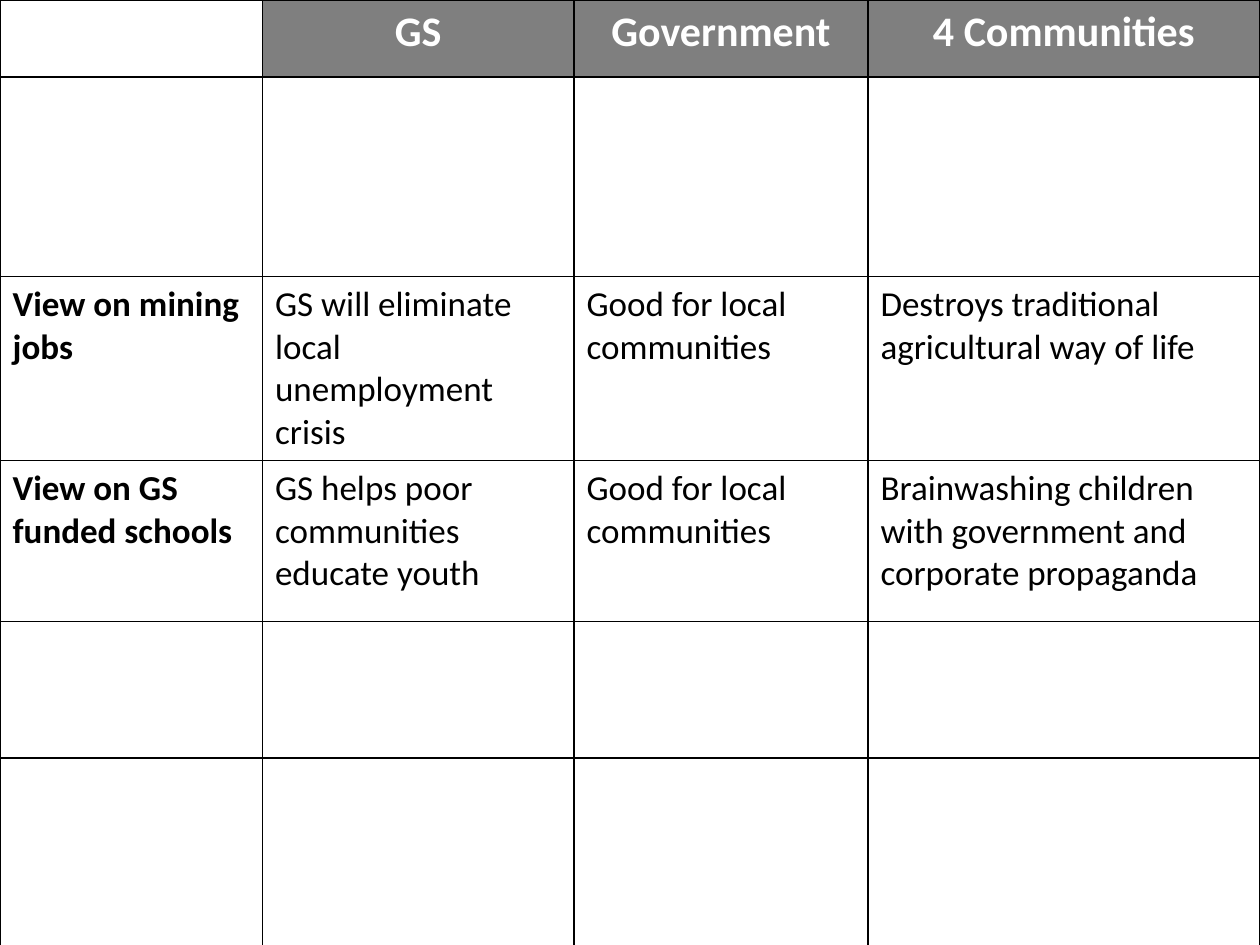
from lxml.etree import SubElement
from pptx import Presentation
from pptx.dml.color import RGBColor
from pptx.enum.text import PP_ALIGN as Align
from pptx.oxml.ns import qn
from pptx.util import Pt

COLUMN_WIDTHS = [150, 178, 168, 224]
ROW_HEIGHTS = [44, 114, 103, 92, 78, 114]
BLANK_ROW = ["", "", "", ""]
ROWS = [
    ["", "GS", "Government", "4 Communities"],
    BLANK_ROW,
    ["View on mining jobs", "GS will eliminate local unemployment crisis",
     "Good for local communities", "Destroys traditional agricultural way of life"],
    ["View on GS funded schools", "GS helps poor communities educate youth",
     "Good for local communities",
     "Brainwashing children with government and corporate propaganda"],
    BLANK_ROW,
    BLANK_ROW,
]
BLACK, WHITE = "000000", "FFFFFF"


def color(value):
    return RGBColor.from_string(value)


def add_borders(cell):
    properties = cell._tc.get_or_add_tcPr()
    for side in ("a:lnL", "a:lnR", "a:lnT", "a:lnB"):
        line = SubElement(properties, qn(side), w=str(Pt(1)))
        fill = SubElement(line, qn("a:solidFill"))
        SubElement(fill, qn("a:srgbClr"), val=BLACK)


def fill_cell(cell, is_heading):
    if not is_heading:
        cell.fill.background()
        return
    cell.fill.solid()
    cell.fill.fore_color.rgb = color(BLACK)
    shade = cell._tc.tcPr.find(qn("a:solidFill")).find(qn("a:srgbClr"))
    SubElement(shade, qn("a:alpha"), val="50000")


def write_text(cell, text, is_heading, is_bold):
    cell.margin_left = cell.margin_right = Pt(7.2)
    cell.margin_top = cell.margin_bottom = Pt(3.6)
    cell.text = text
    para = cell.text_frame.paragraphs[0]
    para.alignment = Align.CENTER if is_heading else Align.LEFT
    para.font.name = "Calibri"
    para.font.size = Pt(24 if is_heading else 20)
    para.font.bold = is_bold
    para.font.color.rgb = color(WHITE if is_heading else BLACK)


def main():
    """Build a slide comparing three groups' views on mining."""
    deck = Presentation()
    deck.slide_width, deck.slide_height = Pt(720), Pt(540)
    page = deck.slides.add_slide(deck.slide_layouts[6])
    table = page.shapes.add_table(
        len(ROWS), len(COLUMN_WIDTHS), Pt(0), Pt(0),
        Pt(sum(COLUMN_WIDTHS)), Pt(sum(ROW_HEIGHTS))).table
    table.first_row = table.horz_banding = False
    for column, width in zip(table.columns, COLUMN_WIDTHS):
        column.width = Pt(width)
    for row, height in zip(table.rows, ROW_HEIGHTS):
        row.height = Pt(height)
    for row_index, texts in enumerate(ROWS):
        for column_index, text in enumerate(texts):
            cell = table.cell(row_index, column_index)
            is_heading = row_index == 0 and column_index > 0
            add_borders(cell)
            fill_cell(cell, is_heading)
            if text:
                write_text(cell, text, is_heading, is_heading or column_index == 0)
    deck.save("out.pptx")


if __name__ == "__main__":
    main()
